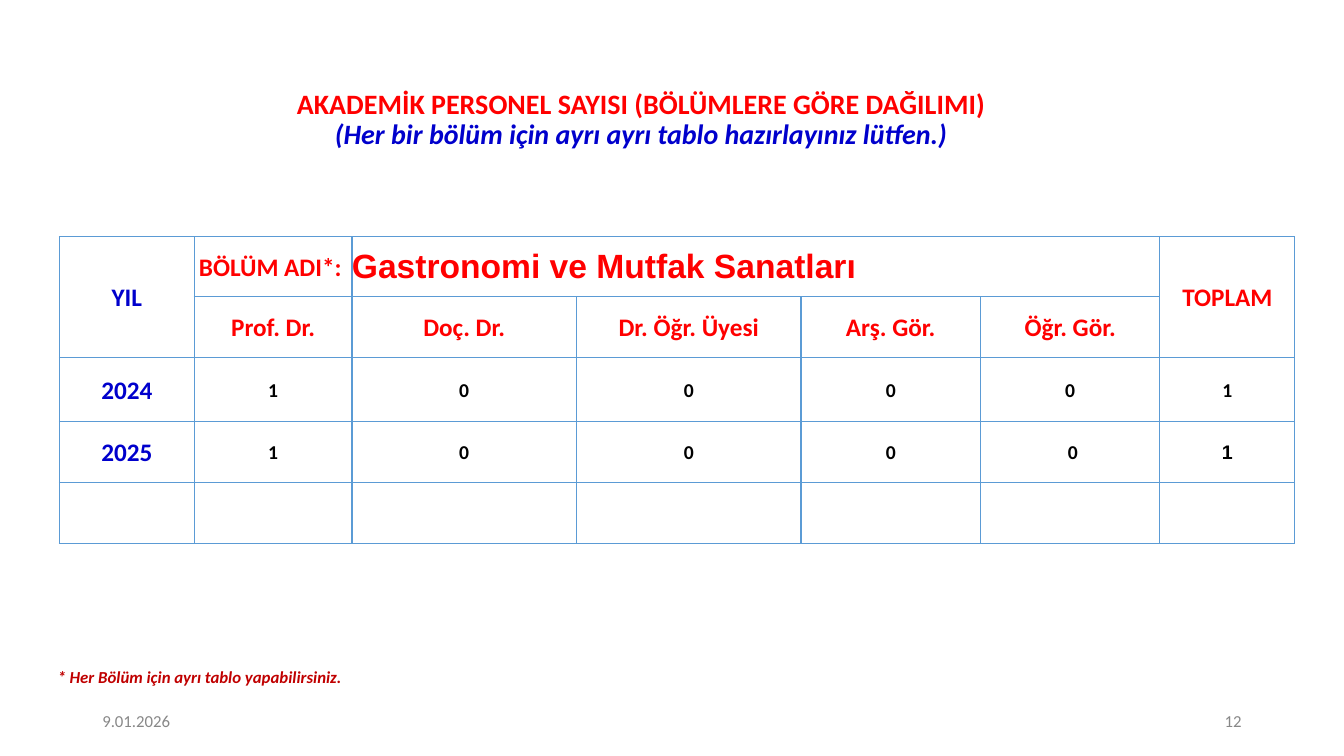
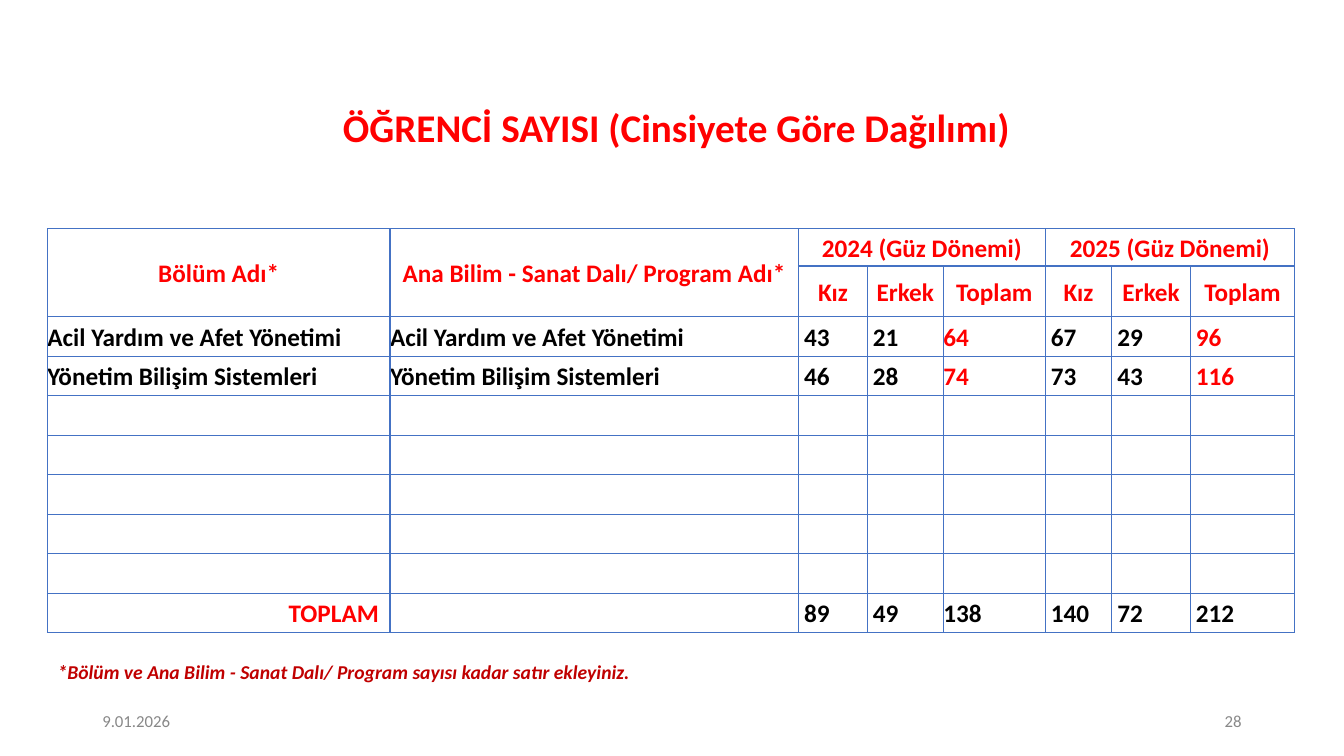
"""Builds two slides of staff and student number tables."""
from lxml import etree
from pptx import Presentation
from pptx.dml.color import RGBColor
from pptx.enum.text import MSO_ANCHOR, PP_ALIGN
from pptx.oxml.ns import qn
from pptx.util import Pt

LEFT, CENTER, RIGHT = PP_ALIGN.LEFT, PP_ALIGN.CENTER, PP_ALIGN.RIGHT
TOP, MIDDLE = MSO_ANCHOR.TOP, MSO_ANCHOR.MIDDLE

RED = RGBColor(0xFF, 0x00, 0x00)
DARK_RED = RGBColor(0xC0, 0x00, 0x00)
BLUE = RGBColor(0x00, 0x00, 0xCC)
BLACK = RGBColor(0x00, 0x00, 0x00)
GRAY = RGBColor(0x88, 0x88, 0x88)
SKY_BORDER = RGBColor(0x5B, 0x9B, 0xD5)
BLUE_BORDER = RGBColor(0x44, 0x72, 0xC4)

BODY_FONT = "Calibri"
DATE = "9.01.2026"
INDENT = 4


def write_text(para, text, size=18, color=BLACK, font=BODY_FONT, bold=True,
               italic=False, align=LEFT, spacing=1.0):
    """Write one formatted run into a paragraph."""
    para.alignment = align
    para.line_spacing = spacing
    span = para.add_run()
    span.text = text
    span.font.name = font
    span.font.size = Pt(size)
    span.font.bold = bold
    span.font.italic = italic
    span.font.color.rgb = color


def add_text(page, left, top, width, height, text, anchor=TOP, **style):
    """Add a wrapping text box with one paragraph and return its frame."""
    box = page.shapes.add_textbox(Pt(left), Pt(top), Pt(width), Pt(height))
    frame = box.text_frame
    frame.word_wrap = True
    frame.vertical_anchor = anchor
    write_text(frame.paragraphs[0], text, **style)
    return frame


def add_title(page, left, top, width, height, text, size):
    """Add a centred red title and return its frame."""
    return add_text(page, left, top, width, height, text, anchor=MIDDLE,
                    size=size, color=RED, align=CENTER, spacing=0.9)


def add_note(page, top, text, size):
    """Add the remark below a table."""
    add_text(page, 34, top, 610, 24, text, size=size, color=DARK_RED, italic=True)


def add_footer(page, number):
    """Add the date and the page number."""
    for left, text, align in ((66, DATE, LEFT), (678, number, RIGHT)):
        add_text(page, left, 500.4, 216, 28.8, text, anchor=MIDDLE, size=12,
                 color=GRAY, bold=False, align=align)


def style_cell(cell, border):
    """Clear the fill and margins of a cell and draw its four borders."""
    properties = cell._tc.get_or_add_tcPr()
    for side in ("lnL", "lnR", "lnT", "lnB"):
        line = etree.SubElement(properties, qn(f"a:{side}"), w=str(Pt(1)))
        fill = etree.SubElement(line, qn("a:solidFill"))
        etree.SubElement(fill, qn("a:srgbClr"), val=str(border))
    cell.fill.background()
    cell.vertical_anchor = MIDDLE
    cell.margin_left = cell.margin_right = cell.margin_top = cell.margin_bottom = 0


def add_grid(page, left, top, widths, heights, border, merges):
    """Add an empty bordered table with merged header cells."""
    table = page.shapes.add_table(len(heights), len(widths), Pt(left), Pt(top),
                                  Pt(sum(widths)), Pt(sum(heights))).table
    table.first_row = table.horz_banding = False
    for column, width in zip(table.columns, widths):
        column.width = Pt(width)
    for row, height in zip(table.rows, heights):
        row.height = Pt(height)
    for cell in table.iter_cells():
        style_cell(cell, border)
    for first, last in merges:
        table.cell(*first).merge(table.cell(*last))
    return table


def fill_cell(table, row, column, text, indent=0, right_indent=0, spacing=1.07,
              **style):
    """Write formatted text into a table cell."""
    cell = table.cell(row, column)
    cell.margin_left, cell.margin_right = Pt(indent), Pt(right_indent)
    write_text(cell.text_frame.paragraphs[0], text, spacing=spacing, **style)


def build_staff_page(deck):
    """Build the page of academic staff numbers."""
    page = deck.slides.add_slide(deck.slide_layouts[6])
    title = add_title(page, 51, 50.4, 814, 71.3,
                      "AKADEMİK PERSONEL SAYISI (BÖLÜMLERE GÖRE DAĞILIMI)", 20)
    write_text(title.add_paragraph(),
               "(Her bir bölüm için ayrı ayrı tablo hazırlayınız lütfen.)",
               size=20, color=BLUE, italic=True, align=CENTER, spacing=0.9)
    table = add_grid(page, 42.4, 169, [96.4, 112.6, 160.4, 160.4, 128.2, 128.2, 96.4],
                     [42.9, 43.6, 45.7, 43.6, 43.6], SKY_BORDER,
                     [((0, 0), (1, 0)), ((0, 2), (0, 5)), ((0, 6), (1, 6))])
    fill_cell(table, 0, 0, "YIL", color=BLUE, align=CENTER)
    fill_cell(table, 0, 1, "BÖLÜM ADI*:", right_indent=INDENT, color=RED, align=CENTER)
    fill_cell(table, 0, 2, "Gastronomi ve Mutfak Sanatları", spacing=1.0,
              size=24, font="Arial", color=RED)
    fill_cell(table, 0, 6, "TOPLAM", color=RED, align=CENTER)
    ranks = ["Prof. Dr.", "Doç. Dr.", "Dr. Öğr. Üyesi", "Arş. Gör.", "Öğr. Gör."]
    for column, rank in enumerate(ranks, 1):
        fill_cell(table, 1, column, rank, color=RED, align=CENTER)
    counts = {"2024": "100001", "2025": "100001"}
    for row, (year, numbers) in enumerate(counts.items(), 2):
        fill_cell(table, row, 0, year, color=BLUE, align=CENTER)
        for column, number in enumerate(numbers, 1):
            fill_cell(table, row, column, number, size=14, align=CENTER,
                      indent=INDENT if (row, column) == (3, 5) else 0,
                      font="Arial" if (row, column) == (3, 6) else BODY_FONT)
    add_note(page, 473, "* Her Bölüm için ayrı tablo yapabilirsiniz.", 12)
    add_footer(page, "12")


def build_student_page(deck):
    """Build the page of student numbers by gender."""
    page = deck.slides.add_slide(deck.slide_layouts[6])
    add_title(page, 49, 69.1, 868, 47.5, "ÖĞRENCİ SAYISI (Cinsiyete Göre Dağılımı)", 28)
    add_note(page, 468, "*Bölüm ve Ana Bilim - Sanat Dalı/ Program sayısı kadar "
             "satır ekleyiniz.", 14)
    table = add_grid(page, 33.9, 163.5,
                     [244.7, 291.8, 49.2, 54.2, 72.9, 47.5, 56.1, 74.6],
                     [26.5, 36.2] + [28.25] * 8, BLUE_BORDER,
                     [((0, 0), (1, 0)), ((0, 1), (1, 1)),
                      ((0, 2), (0, 4)), ((0, 5), (0, 7))])
    headings = {0: "Bölüm Adı*", 1: "Ana Bilim - Sanat Dalı/ Program Adı*",
                2: "2024 (Güz Dönemi)", 5: "2025 (Güz Dönemi)"}
    for column, heading in headings.items():
        fill_cell(table, 0, column, heading, color=RED, align=CENTER)
    for column, heading in enumerate(["Kız", "Erkek", "Toplam"] * 2, 2):
        fill_cell(table, 1, column, heading, color=RED, align=CENTER)
    programs = {2: "Acil Yardım ve Afet Yönetimi", 3: "Yönetim Bilişim Sistemleri"}
    for row, program in programs.items():
        for column in (0, 1):
            fill_cell(table, row, column, program)
    fill_cell(table, 9, 0, "TOPLAM", right_indent=2 * INDENT, color=RED, align=RIGHT)
    counts = {2: [43, 21, 64, 67, 29, 96], 3: [46, 28, 74, 73, 43, 116],
              9: [89, 49, 138, 140, 72, 212]}
    for row, numbers in counts.items():
        for column, number in enumerate(numbers, 2):
            is_red = row in programs and column in (4, 7)
            fill_cell(table, row, column, str(number),
                      indent=0 if column == 4 else INDENT,
                      color=RED if is_red else BLACK)
    add_footer(page, "28")


def main():
    """Build and save the deck."""
    deck = Presentation()
    deck.slide_width, deck.slide_height = Pt(960), Pt(540)
    build_staff_page(deck)
    build_student_page(deck)
    deck.save("out.pptx")


if __name__ == "__main__":
    main()
